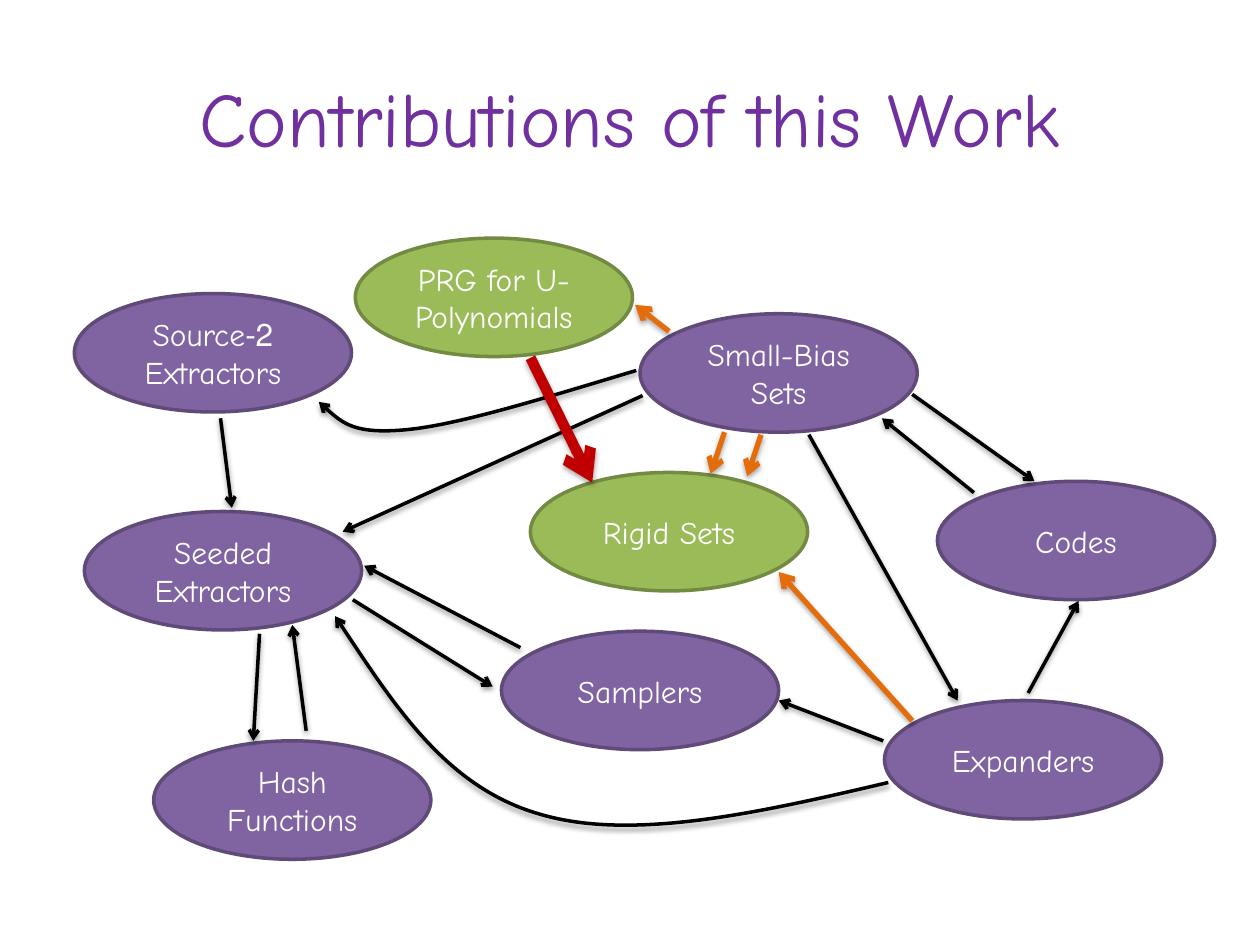
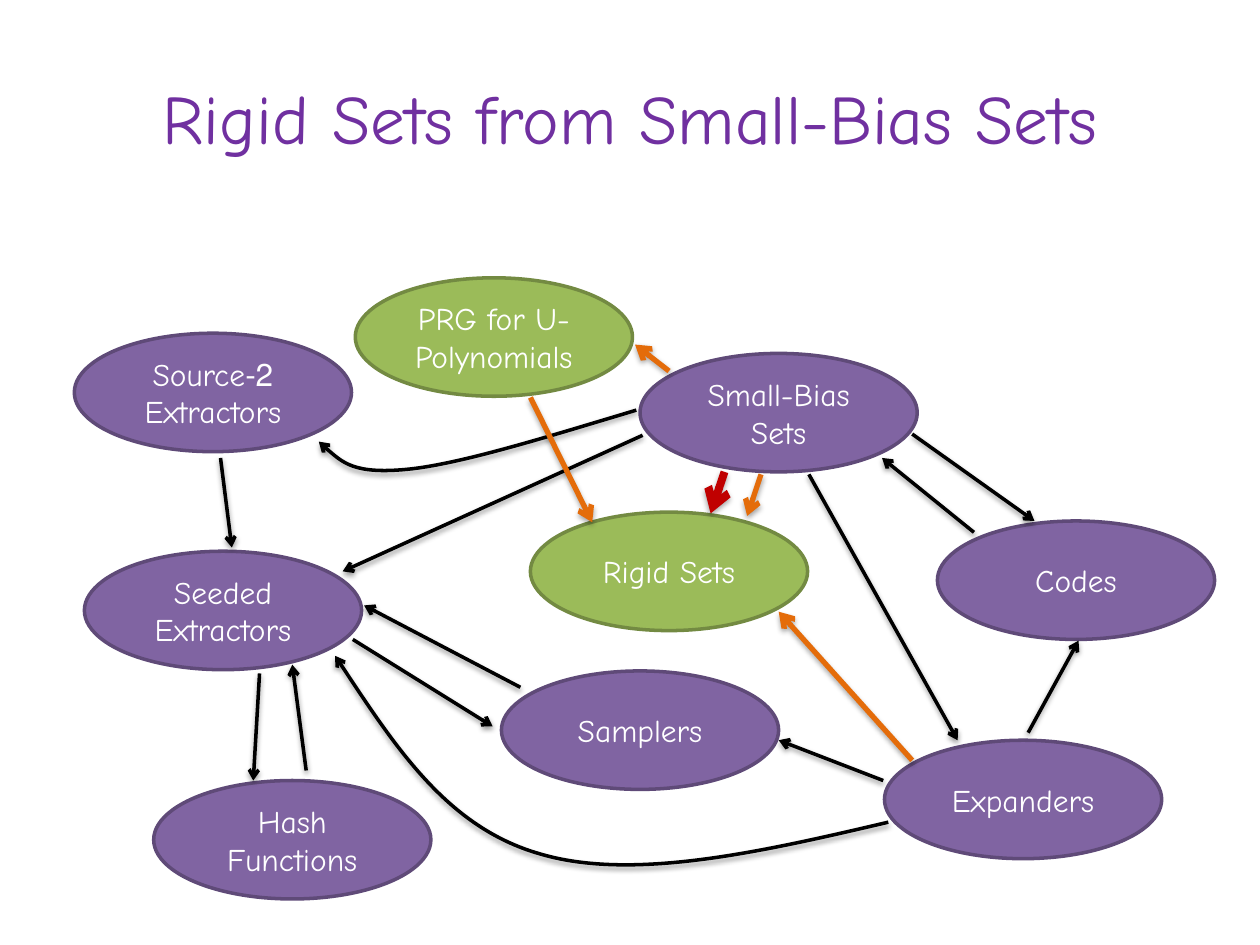
from dataclasses import dataclass

from lxml.etree import SubElement
from pptx import Presentation
from pptx.dml.color import RGBColor as Rgb
from pptx.enum.shapes import MSO_CONNECTOR as Connector, MSO_SHAPE as Shape
from pptx.enum.text import MSO_ANCHOR as Anchor, PP_ALIGN as Align
from pptx.oxml.ns import qn
from pptx.util import Inches, Pt


@dataclass(frozen=True)
class Theme:
    font: str = "Comic Neue"
    title: str = "7030A0"
    label: str = "FFFFFF"
    label_size: float = 18
    known: tuple = ("8064A2", "5F4A78")
    new: tuple = ("9BBB59", "738A42")
    known_link: str = "000000"
    new_link: str = "E46C0A"
    focus_link: str = "C00000"
    known_width: float = 2
    new_width: float = 3


THEME = Theme()

deck = Presentation()
deck.slide_width, deck.slide_height = Inches(10), Inches(7.5)
COLUMN = deck.slide_width / 100
ROW = deck.slide_height / 75
NODE_COLUMNS, NODE_ROWS = 22, 9.4

# Left column and top row of each oval
KNOWN_NODES = {
    "Expanders": (70.2, 55.6),
    "Codes": (74.4, 38.2),
    "Small-Bias Sets": (50.8, 24.9),
    "Samplers": (39.8, 50.1),
    "Seeded Extractors": (6.7, 40.6),
    "Hash Functions": (12.2, 58.8),
    "2-Source Extractors": (5.9, 23.3),
}
NEW_NODES = {
    "PRG for U-Polynomials": (28.2, 18.9),
    "Rigid Sets": (42.1, 37.5),
}

# Start and end; a curve has two control points before each further point
KNOWN_LINKS = [
    [(72.4, 31.3), (82.1, 38.2)],
    [(64.2, 34.5), (76, 55.6)],
    [(81.6, 55), (85.6, 47.7)],
    [(70.1, 58.8), (61.8, 55.6)],
    [(51, 31.4), (27.2, 42.2)],
    [(24.3, 58), (23.2, 49.6)],
    [(20.6, 50.3), (20.1, 58.8)],
    [(41.3, 51.4), (28.9, 44.9)],
    [(28, 47.6), (39.1, 54.5)],
    [(17.5, 33.2), (18.4, 40.3)],
    [(70.5, 62.1), (60.3, 64.5), (50.1, 66.8), (42.8, 64.6),
     (35.5, 62.5), (31.1, 55.7), (26.6, 48.9)],
    [(77.3, 39.1), (70, 33.2)],
    [(50.5, 29.4), (43.5, 31.5), (36.5, 33.7), (32.3, 34.1),
     (28.1, 34.5), (26.7, 33.2), (25.3, 31.9)],
]
NEW_LINKS = {
    "polynomials to rigid": [(42.1, 28.4), (47, 38.3)],
    "bias to polynomials": [(53.1, 26.3), (50.4, 24.2)],
    "bias to rigid": [(57.5, 34.3), (56.4, 37.6)],
    "expanders to rigid": [(72.4, 57.2), (61.8, 45.4)],
    "bias to rigid again": [(60.4, 34.5), (59.3, 37.8)],
}

# Title, its size, rows the diagram is lowered, link in focus, its width
SLIDES = [
    ("Contributions of this Work", 44, 0, "polynomials to rigid", 6),
    ("Rigid Sets from Small-Bias Sets", 39.6, 3.15, "bias to rigid", 4.5),
]


def write(holder, text, *, size, color, rtl=False):
    frame = holder.text_frame
    frame.word_wrap = True
    frame.vertical_anchor = Anchor.MIDDLE
    paragraph = frame.paragraphs[0]
    paragraph.alignment = Align.CENTER
    if rtl:
        paragraph._p.get_or_add_pPr().set("rtl", "1")
    run = paragraph.add_run()
    run.text = text
    run.font.name = THEME.font
    run.font.size = Pt(size)
    run.font.color.rgb = Rgb.from_string(color)


def draw_link(slide, points, drop, color, width, shadow_alpha):
    """Draw a straight or curved arrow with a soft shadow below it."""
    spots = [(round(x * COLUMN), round((y + drop) * ROW)) for x, y in points]
    if len(spots) == 2:
        link = slide.shapes.add_connector(Connector.STRAIGHT, *spots[0], *spots[1])
    else:
        builder = slide.shapes.build_freeform(*spots[0])
        builder.add_line_segments(spots[1:], close=False)
        link = builder.convert_to_shape()
        link.fill.background()
        steps = list(link._element.iter(qn("a:lnTo")))
        for first in range(0, len(steps), 3):
            curve = SubElement(steps[0].getparent(), qn("a:cubicBezTo")) if first == 0 \
                else SubElement(curve.getparent(), qn("a:cubicBezTo"))
            for step in steps[first:first + 3]:
                curve.append(step[0])
                step.getparent().remove(step)
    link.line.color.rgb = Rgb.from_string(color)
    link.line.width = Pt(width)
    properties = link._element.spPr
    SubElement(properties.find(qn("a:ln")), qn("a:tailEnd"), type="arrow")
    effects = SubElement(properties, qn("a:effectLst"))
    shadow = SubElement(effects, qn("a:outerShdw"), blurRad=str(Pt(3.1)),
                        dist=str(Pt(1.6)), dir="5400000", rotWithShape="0")
    black = SubElement(shadow, qn("a:srgbClr"), val="000000")
    SubElement(black, qn("a:alpha"), val=str(shadow_alpha * 1000))


for title, title_size, drop, focus, focus_width in SLIDES:
    slide = deck.slides.add_slide(deck.slide_layouts[6])
    heading = slide.shapes.add_textbox(
        round(5 * COLUMN), round(3 * ROW), round(90 * COLUMN), round(12.5 * ROW))
    write(heading, title, size=title_size, color=THEME.title)

    known_links = [(points, THEME.known_link, THEME.known_width, 38)
                   for points in KNOWN_LINKS]
    new_links = [(points, THEME.focus_link, focus_width, 35) if name == focus
                 else (points, THEME.new_link, THEME.new_width, 35)
                 for name, points in NEW_LINKS.items()]

    for nodes, (fill, edge), links in (
            (KNOWN_NODES, THEME.known, known_links),
            (NEW_NODES, THEME.new, new_links)):
        for label, (left, top) in nodes.items():
            node = slide.shapes.add_shape(
                Shape.OVAL, round(left * COLUMN), round((top + drop) * ROW),
                round(NODE_COLUMNS * COLUMN), round(NODE_ROWS * ROW))
            node.shadow.inherit = False
            node.fill.solid()
            node.fill.fore_color.rgb = Rgb.from_string(fill)
            node.line.color.rgb = Rgb.from_string(edge)
            node.line.width = Pt(2)
            write(node, label, size=THEME.label_size, color=THEME.label, rtl=True)
        for points, color, width, shadow_alpha in links:
            draw_link(slide, points, drop, color, width, shadow_alpha)

deck.save("out.pptx")
